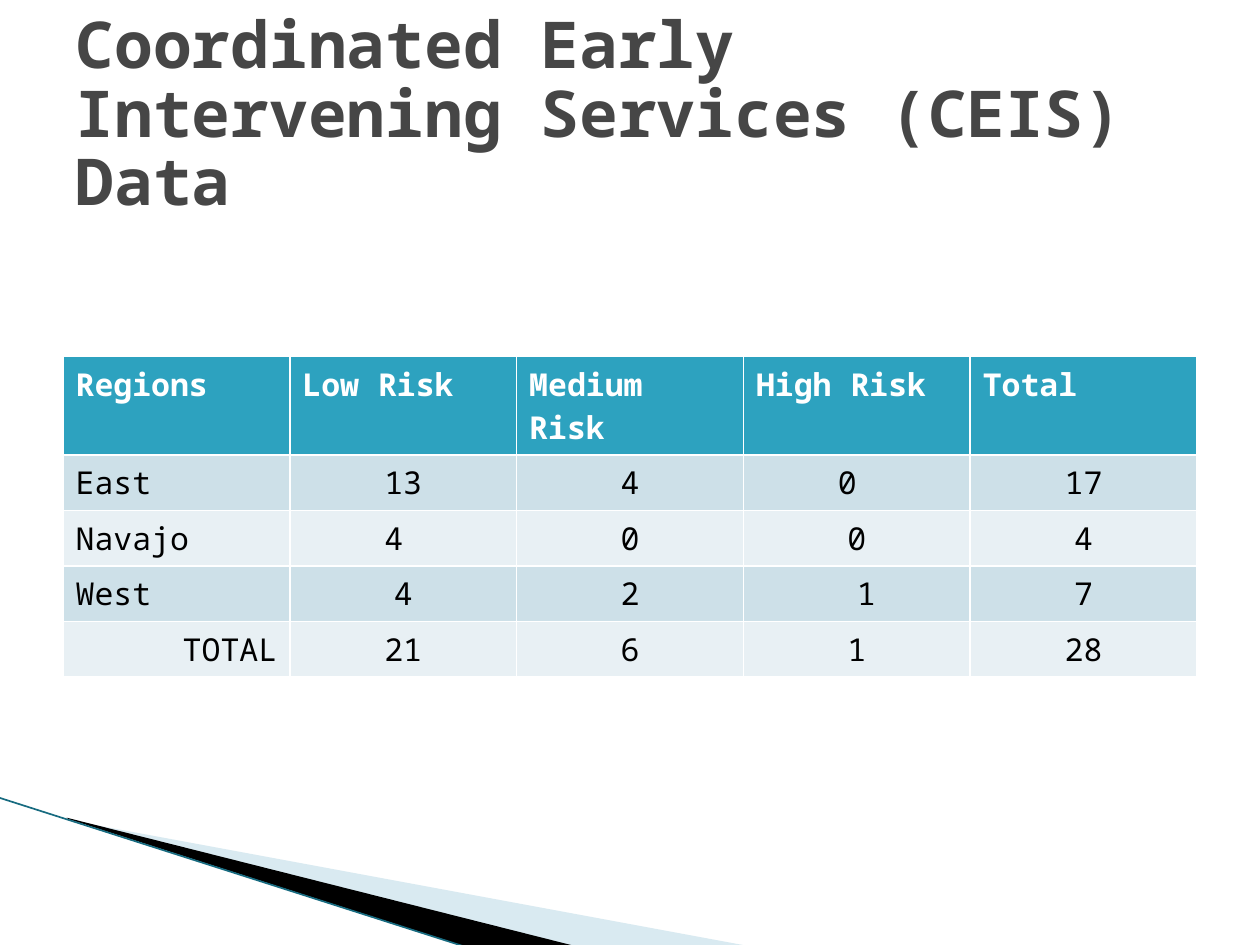
"""Build the Coordinated Early Intervening Services data slide."""
from lxml import etree
from pptx import Presentation
from pptx import util as u
from pptx.dml.color import RGBColor
from pptx.enum import shapes, text
from pptx.oxml.ns import qn

FONT = "Noto Sans Mono"
WHITE = RGBColor(0xFF, 0xFF, 0xFF)
BLACK = RGBColor(0, 0, 0)
GRAY = RGBColor(0x46, 0x46, 0x46)
TEAL = RGBColor(0x2D, 0xA2, 0xBF)
DARK_TEAL = RGBColor(0x17, 0x6B, 0x80)
PALE_BLUE = RGBColor(0xA0, 0xCB, 0xDC)
BAND_DARK = RGBColor(0xCD, 0xE0, 0xE8)
BAND_LIGHT = RGBColor(0xE8, 0xF0, 0xF4)

deck = Presentation()
deck.slide_width, deck.slide_height = u.Inches(10), u.Inches(7.5)
page = deck.slides.add_slide(deck.slide_layouts[5])

wedges = [
    (PALE_BLUE, 40, [(0.55, 6.51), (5.95, 7.51), (4.56, 7.51), (0.55, 6.5)]),
    (BLACK, 100, [(0.53, 6.49), (4.57, 7.51), (3.72, 7.52), (0.54, 6.5)]),
]
for color, opacity, corners in wedges:
    points = [(u.Inches(x), u.Inches(y)) for x, y in corners]
    builder = page.shapes.build_freeform(*points[0])
    builder.add_line_segments(points[1:])
    wedge = builder.convert_to_shape()
    wedge.shadow.inherit = False
    wedge.fill.solid()
    wedge.fill.fore_color.rgb = color
    wedge.line.fill.background()
    if opacity < 100:
        tint = wedge.fill._xPr.find(".//" + qn("a:srgbClr"))
        etree.SubElement(tint, qn("a:alpha"), val=str(opacity * 1000))

edge = page.shapes.add_connector(
    shapes.MSO_CONNECTOR.STRAIGHT,
    u.Inches(-0.01), u.Inches(6.33), u.Inches(3.71), u.Inches(7.52))
edge.line.color.rgb = DARK_TEAL
edge.line.width = u.Pt(0.95)
etree.SubElement(edge._element.spPr, qn("a:effectLst"))

rows = [
    ["Regions", "Low Risk", "Medium Risk", "High Risk", "Total"],
    ["East", "13", "4", "0 ", "17"],
    ["Navajo", "4 ", "0", "0", "4"],
    ["West", "4", "2", " 1", "7"],
    ["TOTAL", "21", "6", "1", "28"],
]
table = page.shapes.add_table(
    len(rows), len(rows[0]),
    u.Inches(0.5), u.Inches(2.83), u.Inches(9), u.Inches(2.03)).table
for r, row in enumerate(rows):
    for c, value in enumerate(row):
        cell = table.cell(r, c)
        cell.text = value
        cell.fill.solid()
        cell.fill.fore_color.rgb = TEAL if r == 0 else BAND_DARK if r % 2 else BAND_LIGHT
        para = cell.text_frame.paragraphs[0]
        para.font.name = FONT
        para.font.size = u.Pt(18)
        para.font.bold = r == 0
        para.font.color.rgb = WHITE if r == 0 else BLACK
        if r > 0 and c > 0:
            para.alignment = text.PP_ALIGN.CENTER
        elif value == "TOTAL":
            para.alignment = text.PP_ALIGN.RIGHT

title = page.shapes.title
title.left, title.top = u.Inches(0.5), u.Inches(0.3)
title.width, title.height = u.Inches(9), u.Inches(1.25)
frame = title.text_frame
frame.text = "Coordinated Early Intervening Services (CEIS) Data"
frame.word_wrap = True
frame.auto_size = text.MSO_AUTO_SIZE.NONE
frame.vertical_anchor = text.MSO_ANCHOR.MIDDLE
para = frame.paragraphs[0]
para.alignment = text.PP_ALIGN.LEFT
para.line_spacing = 0.88
para.font.name = FONT
para.font.size = u.Pt(36.9)
para.font.bold = True
para.font.color.rgb = GRAY

deck.save("out.pptx")
